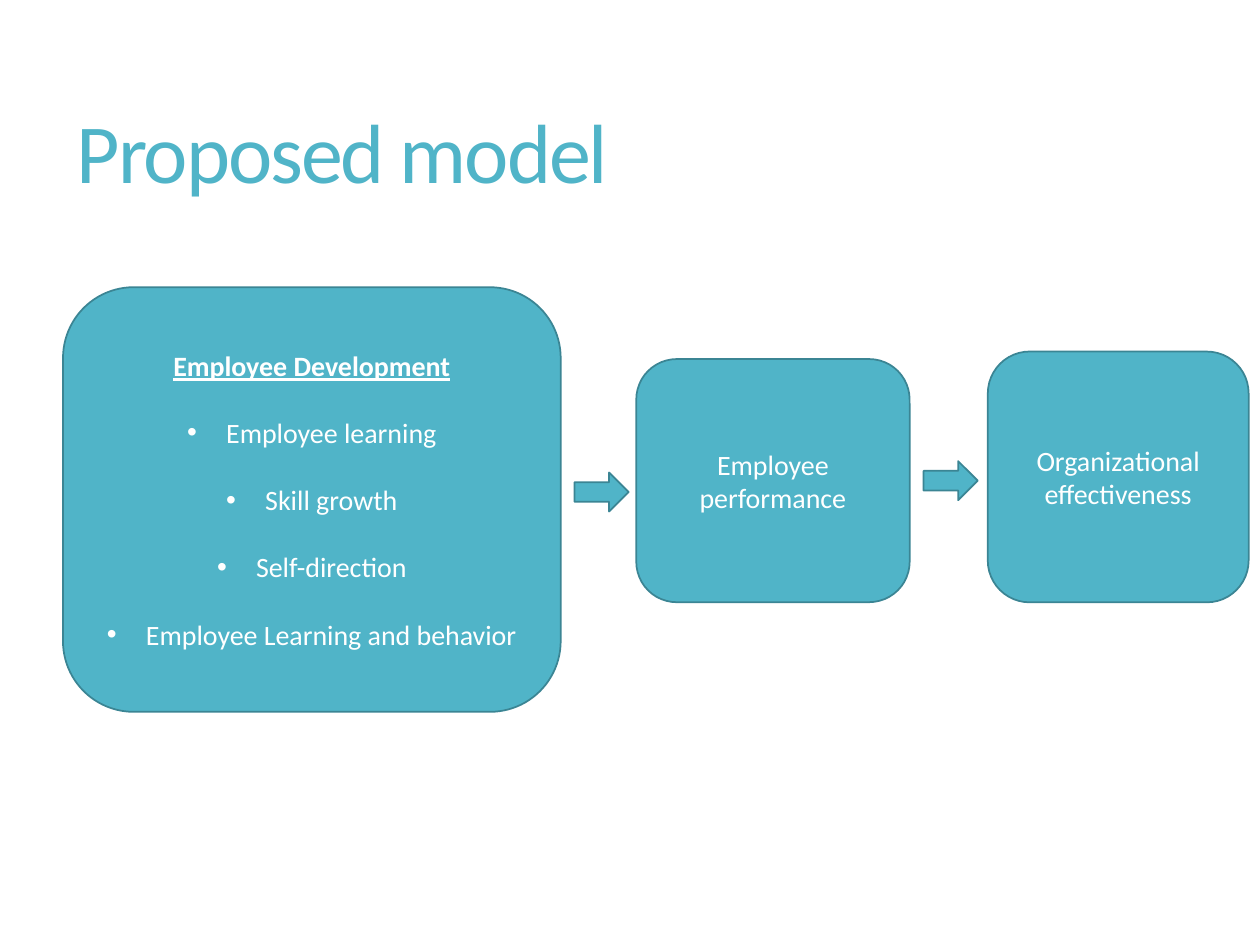
"""Build the proposed model slide: three boxes joined by block arrows."""
from dataclasses import dataclass

from lxml.etree import SubElement
from pptx import Presentation
from pptx.dml.color import RGBColor
from pptx.enum.shapes import MSO_SHAPE
from pptx.enum.text import MSO_ANCHOR, MSO_AUTO_SIZE, PP_ALIGN
from pptx.oxml.ns import qn
from pptx.util import Inches, Pt

FONT = "Calibri"
TEAL = "50B4C8"
DARK_TEAL = "3B8594"
WHITE = "FFFFFF"
ARROW_SIZE = (0.43, 0.31)
BULLET_INDENT = 0.31
LINE_GAP = 19.2


@dataclass(frozen=True)
class Box:
    left: float
    top: float
    width: float
    height: float
    lines: tuple[str, ...]
    bullets: tuple[str, ...] = ()


BOXES = (
    Box(0.5, 2.28, 3.95, 3.37, ("Employee Development",),
        ("Employee learning", "Skill growth", "Self-direction",
         "Employee Learning and behavior")),
    Box(5.05, 2.85, 2.17, 1.93, ("Employee performance",)),
    Box(7.84, 2.79, 2.07, 1.99, ("Organizational", "effectiveness")),
)
ARROWS = ((4.56, 3.75), (7.33, 3.66))


def color(value: str) -> RGBColor:
    return RGBColor.from_string(value)


def add_run(paragraph, text: str, size: float, font_color: str):
    run = paragraph.add_run()
    run.text = text
    run.font.name = FONT
    run.font.size = Pt(size)
    run.font.color.rgb = color(font_color)
    return run


def add_bullet(paragraph) -> None:
    properties = paragraph._p.get_or_add_pPr()
    properties.set("marL", str(Inches(BULLET_INDENT)))
    properties.set("indent", str(-Inches(BULLET_INDENT)))
    SubElement(properties, qn("a:buFont")).set("typeface", "Arial")
    SubElement(properties, qn("a:buChar")).set("char", "•")


def add_teal_shape(slide, kind: MSO_SHAPE, left: float, top: float,
                   width: float, height: float):
    shape = slide.shapes.add_shape(
        kind, Inches(left), Inches(top), Inches(width), Inches(height))
    shape.shadow.inherit = False
    shape.fill.solid()
    shape.fill.fore_color.rgb = color(TEAL)
    shape.line.color.rgb = color(DARK_TEAL)
    shape.line.width = Pt(1)
    return shape


def add_box(slide, box: Box) -> None:
    shape = add_teal_shape(slide, MSO_SHAPE.ROUNDED_RECTANGLE,
                           box.left, box.top, box.width, box.height)
    frame = shape.text_frame
    frame.word_wrap = True
    frame.vertical_anchor = MSO_ANCHOR.MIDDLE
    for index, text in enumerate(box.lines + box.bullets):
        paragraph = frame.add_paragraph() if index else frame.paragraphs[0]
        paragraph.alignment = PP_ALIGN.CENTER
        run = add_run(paragraph, text, 16, WHITE)
        if index >= len(box.lines):
            paragraph.space_before = Pt(LINE_GAP)
            add_bullet(paragraph)
        elif box.bullets:
            run.font.bold = True
            run.font.underline = True


def format_title(title) -> None:
    title.left, title.top = Inches(0.51), Inches(0.55)
    title.width, title.height = Inches(8.87), Inches(1.38)
    frame = title.text_frame
    frame.auto_size = MSO_AUTO_SIZE.NONE
    frame.vertical_anchor = MSO_ANCHOR.MIDDLE
    paragraph = frame.paragraphs[0]
    paragraph.alignment = PP_ALIGN.LEFT
    paragraph.line_spacing = 0.9
    run = add_run(paragraph, "Proposed model", 48, TEAL)
    run.font._element.set("spc", "-120")


def main() -> None:
    presentation = Presentation()
    presentation.slide_width = Inches(10)
    presentation.slide_height = Inches(7.5)
    slide = presentation.slides.add_slide(presentation.slide_layouts[5])
    format_title(slide.shapes.title)
    for box in BOXES:
        add_box(slide, box)
    for left, top in ARROWS:
        add_teal_shape(slide, MSO_SHAPE.RIGHT_ARROW, left, top, *ARROW_SIZE)
    presentation.save("out.pptx")


if __name__ == "__main__":
    main()
